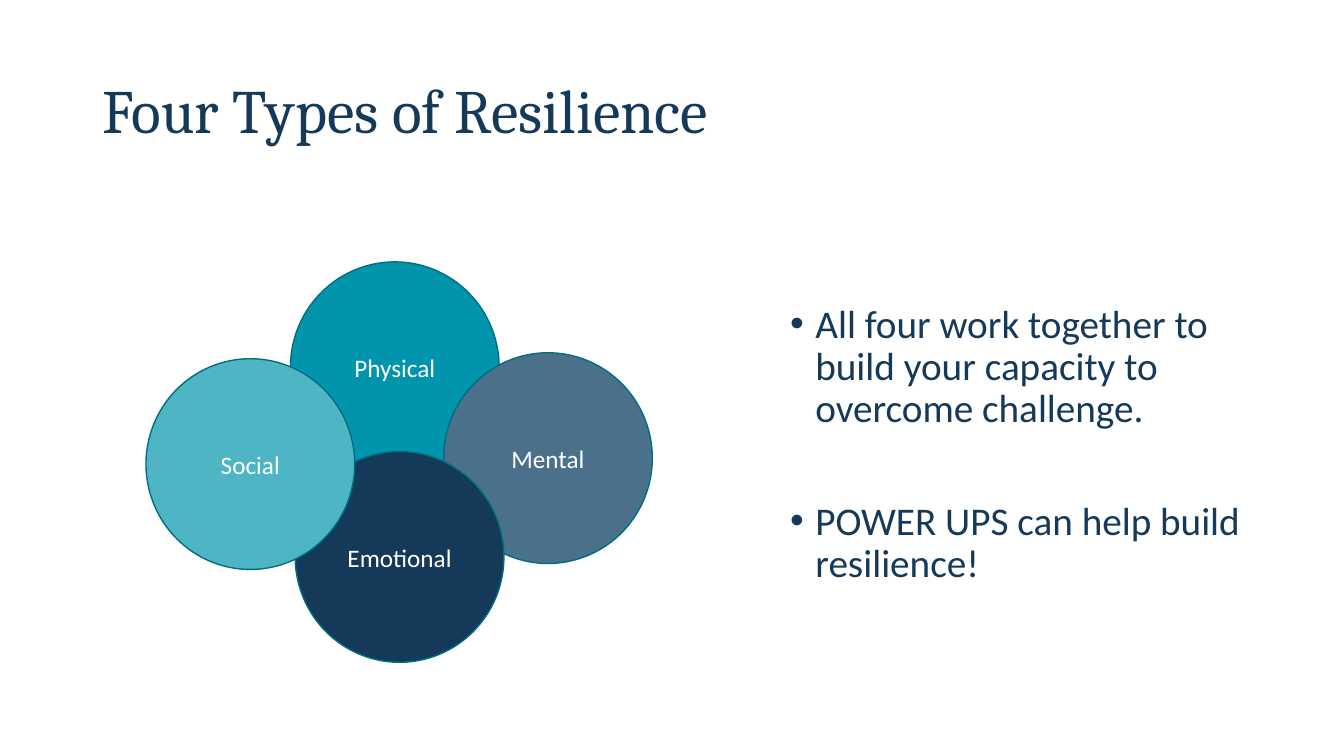
from pptx import Presentation
from pptx.dml.color import RGBColor
from pptx.enum.shapes import MSO_SHAPE
from pptx.enum.text import MSO_ANCHOR, PP_ALIGN
from pptx.oxml.ns import qn
from pptx.util import Cm, Pt
from lxml import etree

COLORS = {
    "navy": "153959",
    "teal": "0095AD",
    "slate": "4B708A",
    "aqua": "4EB5C4",
    "outline": "006E80",
    "white": "FFFFFF",
}
CIRCLE_WIDTH, CIRCLE_HEIGHT = Cm(5.26), Cm(5.31)
# Label, left and top in centimetres, fill; from back to front
RESILIENCE_TYPES = [
    ("Physical", 7.32, 6.6, "teal"),
    ("Mental", 11.18, 8.89, "slate"),
    ("Emotional", 7.44, 11.38, "navy"),
    ("Social", 3.68, 9.04, "aqua"),
]
POINTS = [
    "All four work together to build your capacity to overcome challenge.",
    "POWER UPS can help build resilience!",
]


def color(name):
    return RGBColor.from_string(COLORS[name])


def set_font(paragraph, name, size, color_name):
    paragraph.font.name = name
    paragraph.font.size = Pt(size)
    paragraph.font.color.rgb = color(color_name)


def add_bullet(paragraph):
    properties = paragraph._p.get_or_add_pPr()
    properties.set("marL", str(Cm(0.64)))
    properties.set("indent", str(-Cm(0.64)))
    etree.SubElement(properties, qn("a:buFont")).set("typeface", "Arial")
    etree.SubElement(properties, qn("a:buChar")).set("char", "•")


def add_text_frame(slide, left, top, width, height):
    text_frame = slide.shapes.add_textbox(left, top, width, height).text_frame
    text_frame.word_wrap = True
    return text_frame


def add_title(slide, text):
    text_frame = add_text_frame(slide, Cm(2.34), Cm(1.02), Cm(25.22), Cm(3.68))
    text_frame.vertical_anchor = MSO_ANCHOR.MIDDLE
    paragraph = text_frame.paragraphs[0]
    paragraph.text = text
    paragraph.line_spacing = 0.9
    set_font(paragraph, "Cambria", 44, "navy")


def add_points(slide, points):
    text_frame = add_text_frame(slide, Cm(19.66), Cm(7.54), Cm(12.73), Cm(8.43))
    for index, point in enumerate(points):
        paragraph = text_frame.add_paragraph() if index else text_frame.paragraphs[0]
        paragraph.text = point
        paragraph.line_spacing = 0.9
        paragraph.space_before = Pt(50 if index else 0)
        add_bullet(paragraph)
        set_font(paragraph, "Calibri", 28, "navy")


def add_circle(slide, label, left, top, fill):
    circle = slide.shapes.add_shape(
        MSO_SHAPE.OVAL, Cm(left), Cm(top), CIRCLE_WIDTH, CIRCLE_HEIGHT
    )
    circle.shadow.inherit = False
    circle.fill.solid()
    circle.fill.fore_color.rgb = color(fill)
    circle.line.color.rgb = color("outline")
    circle.line.width = Pt(1)
    circle.text_frame.vertical_anchor = MSO_ANCHOR.MIDDLE
    paragraph = circle.text_frame.paragraphs[0]
    paragraph.text = label
    paragraph.alignment = PP_ALIGN.CENTER
    set_font(paragraph, "Calibri", 18, "white")


def main():
    presentation = Presentation()
    presentation.slide_width = Cm(33.87)
    presentation.slide_height = Cm(19.05)
    slide = presentation.slides.add_slide(presentation.slide_layouts[6])
    add_title(slide, "Four Types of Resilience")
    add_points(slide, POINTS)
    for label, left, top, fill in RESILIENCE_TYPES:
        add_circle(slide, label, left, top, fill)
    presentation.save("out.pptx")


if __name__ == "__main__":
    main()
